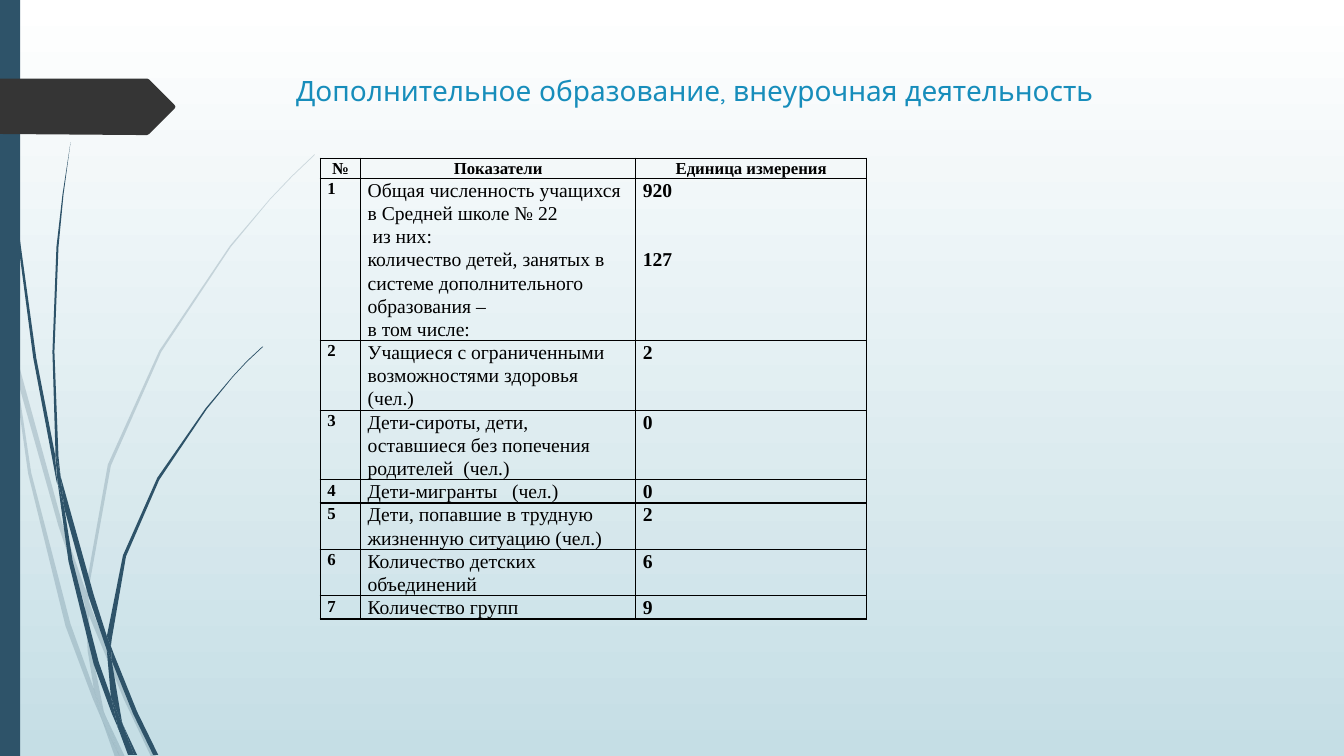
from lxml import etree
from pptx import Presentation
from pptx import util as u
from pptx.dml.color import RGBColor
from pptx.enum import shapes, text
from pptx.oxml import ns

WIDTH, HEIGHT = u.Inches(13.33), u.Inches(7.5)
GRID_STEP = u.Inches(0.01)
NAVY, CHARCOAL, BLUE, BLACK = "2E5369", "353535", "178DBB", "000000"
LINE_HEIGHT = 0.23

# Outline points are (column, row) in grid steps.
PALE_BLADES = [
    [(11, 350), (9, 322), (0, 282), (0, 299), (10, 344)],
    [(58, 522), (84, 599), (85, 586), (62, 520), (14, 345), (17, 376)],
    [(92, 607), (88, 596), (88, 610), (123, 694), (150, 751), (155, 751), (127, 692)],
    [(119, 751), (124, 751), (105, 711)],
    [(93, 683), (70, 619), (31, 469), (17, 376), (11, 350), (28, 470), (65, 621),
     (92, 693), (101, 714), (99, 707)],
    [(84, 599), (87, 646), (93, 683), (96, 692), (105, 711), (103, 706), (91, 646),
     (88, 610), (88, 608)],
    [(88, 584), (110, 462), (160, 349), (229, 245), (268, 198), (290, 175), (312, 154),
     (312, 153), (289, 175), (268, 197), (228, 244), (158, 348), (107, 461), (85, 584),
     (85, 586), (88, 596)],
    [(101, 714), (114, 751), (119, 751)],
    [(88, 608), (88, 610), (88, 596), (85, 586), (84, 599)],
    [(96, 692), (93, 683), (99, 707), (101, 714), (119, 751), (105, 711)],
]
DARK_BLADES = [
    [(7, 110), (17, 233), (33, 355), (56, 477), (57, 481), (55, 457), (55, 453), (36, 355),
     (19, 232), (8, 109), (5, 48), (4, 0), (3, 0), (4, 48)],
    [(88, 592), (106, 645), (106, 633), (106, 631), (93, 590), (60, 472), (64, 505)],
    [(113, 649), (110, 641), (111, 656), (132, 708), (152, 749), (157, 749), (136, 706)],
    [(110, 691), (98, 657), (72, 556), (64, 505), (57, 477), (68, 557), (93, 659),
     (111, 708), (117, 722), (116, 717)],
    [(60, 472), (58, 453), (54, 349), (58, 245), (63, 193), (70, 141), (62, 193),
     (56, 245), (52, 349), (55, 449)],
    [(133, 749), (136, 749), (122, 719)],
    [(57, 477), (64, 505), (60, 472), (55, 449), (55, 453)],
    [(111, 633), (125, 552), (158, 476), (205, 406), (231, 374), (245, 359), (261, 344),
     (260, 344), (245, 358), (231, 373), (204, 405), (156, 474), (122, 551), (106, 631),
     (110, 641)],
    [(117, 722), (127, 749), (131, 749)],
    [(106, 645), (110, 691), (116, 706), (122, 719), (121, 716), (111, 656), (109, 651)],
    [(106, 645), (109, 651), (111, 656), (110, 641), (106, 631), (106, 633)],
    [(116, 706), (110, 691), (116, 717), (117, 722), (130, 749), (133, 749), (122, 719)],
]
POINTER = [(173, 108), (148, 133), (146, 134), (136, 134), (0, 133), (0, 78),
           (136, 78), (146, 78), (148, 79), (173, 104), (174, 106)]

HEADINGS = ["№", "Показатели", "Единица измерения"]
INDICATORS = [
    (["Общая численность учащихся в Средней школе № 22", " из них:",
      "количество детей, занятых в системе дополнительного образования –",
      "в том числе:"], ["920", "127"], 7),
    (["Учащиеся с ограниченными возможностями здоровья (чел.)"], ["2"], 3),
    (["Дети-сироты, дети, оставшиеся без попечения родителей  (чел.)"], ["0"], 3),
    (["Дети-мигранты   (чел.)"], ["0"], 1),
    (["Дети, попавшие в трудную жизненную ситуацию (чел.)"], ["2"], 2),
    (["Количество детских объединений"], ["6"], 2),
    (["Количество групп"], ["9"], 1),
]


def color(value):
    return RGBColor.from_string(value)


def set_all(target, values):
    for name, value in values.items():
        setattr(target, name, value)


def box(left, top, width, height):
    return dict(left=int(WIDTH * left / 100), top=int(HEIGHT * top / 100),
                width=int(WIDTH * width / 100), height=int(HEIGHT * height / 100))


def paint(shape, value, opacity=100):
    shape.shadow.inherit = False
    shape.fill.solid()
    shape.fill.fore_color.rgb = color(value)
    shape.line.fill.background()
    if opacity < 100:
        fill_color = shape._element.spPr.find(".//" + ns.qn("a:srgbClr"))
        etree.SubElement(fill_color, ns.qn("a:alpha"), val=str(opacity * 1000))


def add_outline(slide, points, value, opacity=100):
    builder = slide.shapes.build_freeform(*points[0], scale=GRID_STEP ** -1 * GRID_STEP ** 2)
    builder.add_line_segments(points[1:], close=True)
    paint(builder.convert_to_shape(), value, opacity)


def add_background(slide):
    fill = slide.background.fill
    fill.gradient()
    fill.gradient_angle = 270
    for stop, position, value in zip(fill.gradient_stops, (0, 1), ("FFFFFF", "C5DEE5")):
        stop.position = position
        stop.color.rgb = color(value)


def format_title(title, words):
    set_all(title, box(21.28, 9.07, 73.14, 18.67))
    set_all(title.text_frame, dict(text=words, vertical_anchor=text.MSO_ANCHOR.TOP, word_wrap=True))
    paragraph = title.text_frame.paragraphs[0]
    paragraph.alignment = text.PP_ALIGN.LEFT
    set_all(paragraph.font, dict(name="Quicksand", size=u.Pt(20)))
    paragraph.font.color.rgb = color(BLUE)


def add_borders(cell):
    properties = cell._tc.get_or_add_tcPr()
    for index, side in enumerate(("a:lnL", "a:lnR", "a:lnT", "a:lnB")):
        line = etree.Element(ns.qn(side), w=str(u.Pt(1)))
        fill = etree.SubElement(line, ns.qn("a:solidFill"))
        etree.SubElement(fill, ns.qn("a:srgbClr"), val=BLACK)
        properties.insert(index, line)


def fill_cell(cell, lines, size, bold, alignment=text.PP_ALIGN.LEFT):
    cell.fill.background()
    add_borders(cell)
    set_all(cell, dict(margin_left=u.Inches(0.07), margin_right=u.Inches(0.07),
                       margin_top=0, margin_bottom=0))
    cell.text_frame.text = "\n".join(lines)
    for paragraph in cell.text_frame.paragraphs:
        set_all(paragraph, dict(alignment=alignment, line_spacing=1.07))
        set_all(paragraph.font, dict(name="Times New Roman", size=u.Pt(size), bold=bold))
        paragraph.font.color.rgb = color(BLACK)


def add_indicators(slide):
    area = box(23.83, 20.93, 40.66, 61)
    table = slide.shapes.add_table(len(INDICATORS) + 1, len(HEADINGS), **area).table
    set_all(table, dict(first_row=False, horz_banding=False))
    for column, width in zip(table.columns, (0.4, 2.73, 2.29)):
        column.width = u.Inches(width)
    table.rows[0].height = u.Inches(0.2)
    for index, heading in enumerate(HEADINGS):
        fill_cell(table.cell(0, index), [heading], 12, True, text.PP_ALIGN.CENTER)
    for number, (names, values, line_count) in enumerate(INDICATORS, 1):
        table.rows[number].height = u.Inches(LINE_HEIGHT * line_count)
        fill_cell(table.cell(number, 0), [str(number)], 12, True)
        fill_cell(table.cell(number, 1), names, 14, False)
        fill_cell(table.cell(number, 2), values, 14, True)
    enrolled = table.cell(1, 2).text_frame.paragraphs[1]
    enrolled.space_before = u.Inches(2 * LINE_HEIGHT)


def main():
    presentation = Presentation()
    set_all(presentation, dict(slide_width=WIDTH, slide_height=HEIGHT))
    slide = presentation.slides.add_slide(presentation.slide_layouts[5])
    add_background(slide)
    for blades, opacity in ((PALE_BLADES, 20), (DARK_BLADES, 100)):
        for points in blades:
            add_outline(slide, points, NAVY, opacity)
    bar = slide.shapes.add_shape(shapes.MSO_SHAPE.RECTANGLE, **box(0, 0, 1.5, 100))
    paint(bar, NAVY)
    add_outline(slide, POINTER, CHARCOAL)
    format_title(slide.shapes.title, "Дополнительное образование, внеурочная деятельность")
    add_indicators(slide)
    presentation.save("out.pptx")


if __name__ == "__main__":
    main()
